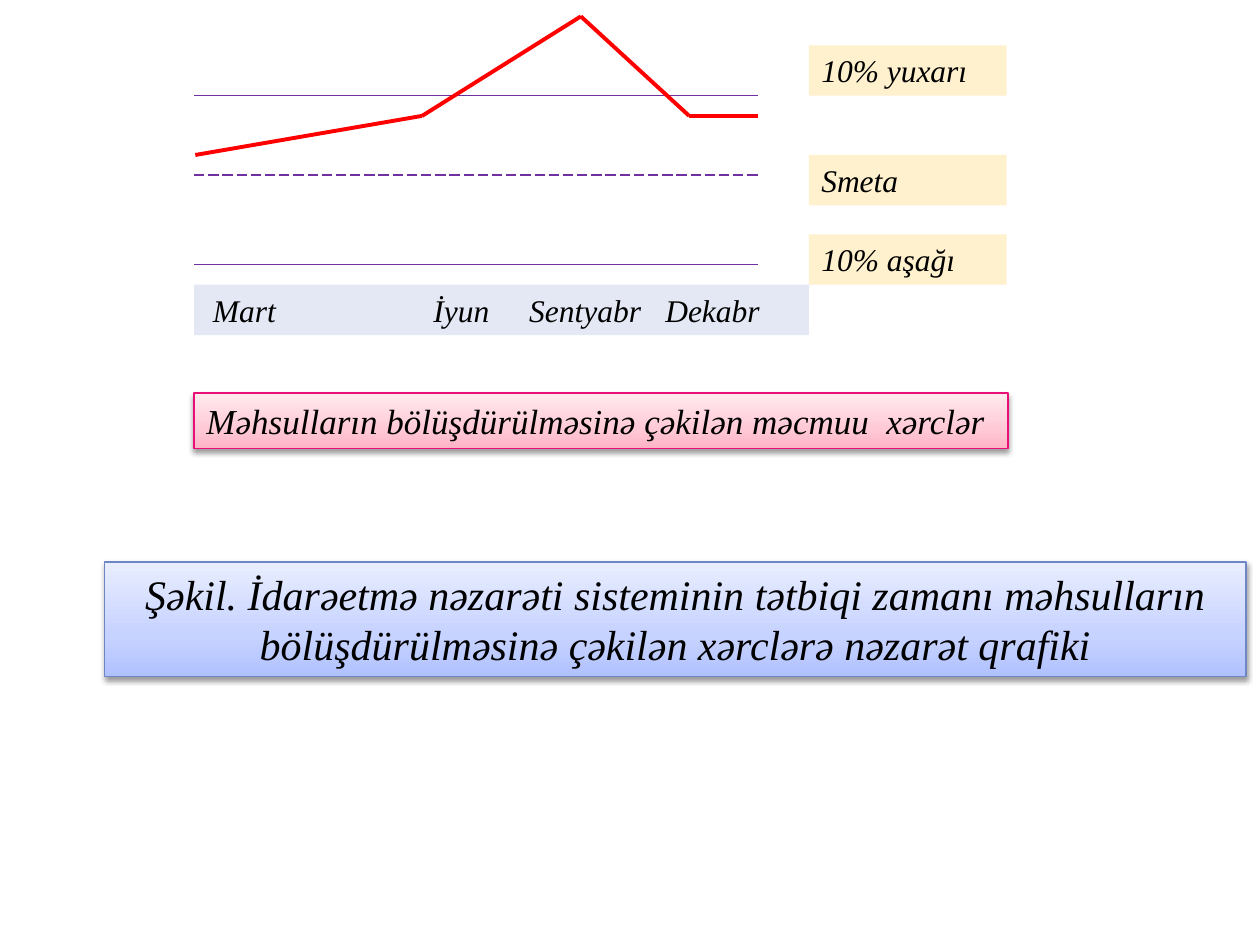
from copy import deepcopy
from dataclasses import dataclass
from itertools import pairwise

from lxml import etree
from pptx import Presentation
from pptx.dml.color import RGBColor
from pptx.enum.dml import MSO_LINE
from pptx.enum.shapes import MSO_CONNECTOR, MSO_SHAPE
from pptx.enum.text import MSO_ANCHOR, MSO_AUTO_SIZE, PP_ALIGN
from pptx.oxml.ns import qn
from pptx.util import Inches, Pt

LEFT, CENTER = PP_ALIGN.LEFT, PP_ALIGN.CENTER
DASH = MSO_LINE.LONG_DASH
STRAIGHT, RECT = MSO_CONNECTOR.STRAIGHT, MSO_SHAPE.RECTANGLE
TOP, GROW = MSO_ANCHOR.TOP, MSO_AUTO_SIZE.SHAPE_TO_FIT_TEXT

FONT = "Times New Roman"
COLORS = {
    "text": "000000", "limit": "7030A0", "trend": "FF0000",
    "label": "FFF1CE", "months": "E3E8F4",
    "pink_line": "EA0F77", "blue_line": "6E86C6",
}
GRADIENTS = {
    "pink": ("FFB3C6", "FFC9D6", "FFEBEF"),
    "blue": ("B0C1FF", "C6D2FF", "E9EEFF"),
}
STOPS = (0, 0.35, 1)

# Grid of 100 columns by 75 rows on the slide
COLS, ROWS = 100, 75
WIDTH, HEIGHT = Inches(10), Inches(7.5)
CHART_LEFT, CHART_RIGHT, LABEL_LEFT = 15.4, 60.2, 64.2
LABEL_W, LABEL_H = 15.7, 4


@dataclass
class Box:
    col: float
    row: float
    cols: float
    rows: float


@dataclass
class Limit:
    text: str
    line_row: float
    label_row: float
    dash: bool = False


@dataclass
class Caption:
    text: str
    box: Box
    style: str
    size: int
    align: int = LEFT


LIMITS = [
    Limit("10% yuxarı", 7.6, 3.6),
    Limit("Smeta", 13.9, 12.3, dash=True),
    Limit("10% aşağı", 21, 18.6),
]
TREND = [(15.5, 12.3), (33.5, 9.2), (46.1, 1.3), (54.7, 9.2), (CHART_RIGHT, 9.2)]
MONTHS = ["Mart", "İyun", "Sentyabr", "Dekabr"]
MONTH_COLS = [16.9, 34.4, 42, 52.8]
CAPTIONS = [
    Caption("Məhsulların bölüşdürülməsinə çəkilən məcmuu  xərclər",
            Box(CHART_LEFT, 31.2, 64.6, 4.4), "pink", 20),
    Caption("Şəkil. İdarəetmə nəzarəti sisteminin tətbiqi zamanı məhsulların "
            "bölüşdürülməsinə çəkilən xərclərə nəzarət qrafiki",
            Box(8.3, 44.6, 90.6, 9.1), "blue", 24, CENTER),
]


def x(cols: float) -> int:
    return round(WIDTH * cols / COLS)


def y(rows: float) -> int:
    return round(HEIGHT * rows / ROWS)


def rgb(name: str) -> RGBColor:
    return RGBColor.from_string(COLORS[name])


def add_line(s, start: tuple, end: tuple, color: str, width: float, dash=False):
    c = s.shapes.add_connector(STRAIGHT, x(start[0]), y(start[1]), x(end[0]), y(end[1]))
    c.line.color.rgb = rgb(color)
    c.line.width = Pt(width)
    if dash:
        c.line.dash_style = DASH
    etree.SubElement(c._element.spPr, qn("a:effectLst"))


def add_box(s, box: Box):
    sp = s.shapes.add_shape(RECT, x(box.col), y(box.row), x(box.cols), y(box.rows))
    sp.line.fill.background()
    sp.shadow.inherit = False
    return sp


def write(sp, text: str, size=18, align=LEFT):
    tf = sp.text_frame
    tf.word_wrap, tf.auto_size, tf.vertical_anchor = True, GROW, TOP
    p = tf.paragraphs[0]
    p.alignment = align
    r = p.add_run()
    r.text = text
    r.font.name, r.font.size, r.font.italic = FONT, Pt(size), True
    r.font.color.rgb = rgb("text")
    return p


def add_label(s, box: Box, text: str, color: str):
    sp = add_box(s, box)
    sp.fill.solid()
    sp.fill.fore_color.rgb = rgb(color)
    return sp, write(sp, text)


def add_months(s, box: Box):
    sp, p = add_label(s, box, "\t".join(MONTHS), "months")
    first, *others = MONTH_COLS
    sp.text_frame.margin_left = x(first - box.col)
    tabs = etree.SubElement(p._p.get_or_add_pPr(), qn("a:tabLst"))
    for col in others:
        etree.SubElement(tabs, qn("a:tab"), pos=str(x(col - first)), algn="l")


def add_caption(s, caption: Caption):
    sp = add_box(s, caption.box)
    # Three-stop gradient running upwards
    sp.fill.gradient()
    sp.fill.gradient_angle = 90
    stops = sp._element.spPr.find(".//" + qn("a:gsLst"))
    stops.append(deepcopy(stops[0]))
    for stop, position, color in zip(sp.fill.gradient_stops, STOPS, GRADIENTS[caption.style]):
        stop.position = position
        stop.color.rgb = RGBColor.from_string(color)
    sp.line.color.rgb = rgb(caption.style + "_line")
    sp.line.width = Pt(0.75)
    # Soft shadow below
    effects = sp._element.spPr.find(qn("a:effectLst"))
    shadow = etree.SubElement(effects, qn("a:outerShdw"), blurRad=str(Pt(3.1)),
                              dist=str(Pt(1.6)), dir="5400000", rotWithShape="0")
    color = etree.SubElement(shadow, qn("a:srgbClr"), val=COLORS["text"])
    etree.SubElement(color, qn("a:alpha"), val="38000")
    write(sp, caption.text, size=caption.size, align=caption.align)


def main():
    prs = Presentation()
    prs.slide_width, prs.slide_height = WIDTH, HEIGHT
    s = prs.slides.add_slide(prs.slide_layouts[6])

    # Budget limits and their labels
    for limit in LIMITS:
        add_line(s, (CHART_LEFT, limit.line_row), (CHART_RIGHT, limit.line_row),
                 "limit", 0.75, limit.dash)
        add_label(s, Box(LABEL_LEFT, limit.label_row, LABEL_W, LABEL_H), limit.text, "label")

    # Actual costs
    for start, end in pairwise(TREND):
        add_line(s, start, end, "trend", 2.25)

    # Month axis and captions
    add_months(s, Box(CHART_LEFT, 22.6, LABEL_LEFT - CHART_LEFT, LABEL_H))
    for caption in CAPTIONS:
        add_caption(s, caption)

    prs.save("out.pptx")


if __name__ == "__main__":
    main()
